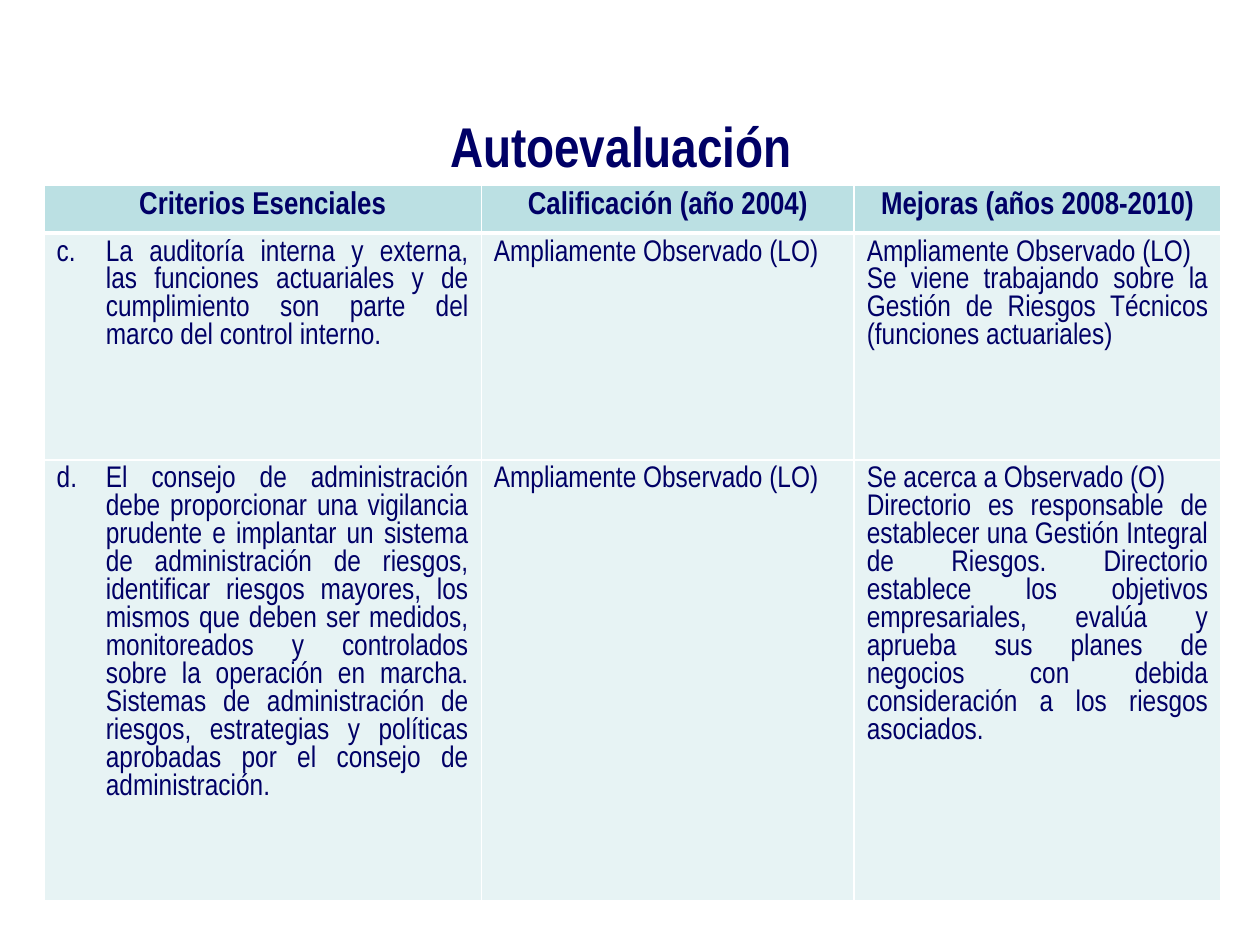
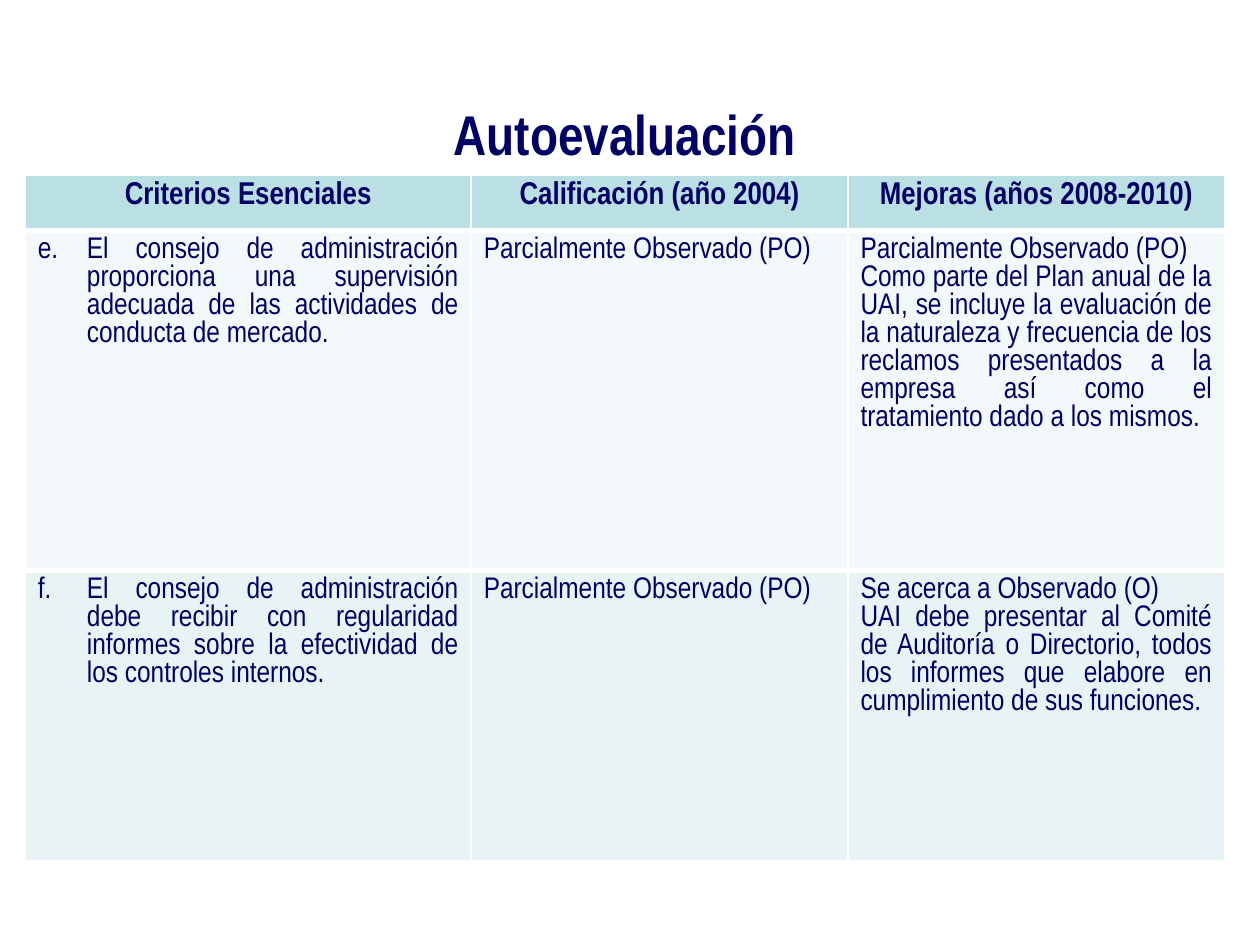
from lxml.etree import SubElement
from pptx import Presentation
from pptx.dml.color import RGBColor as Rgb
from pptx.enum.text import MSO_ANCHOR as Anchor, PP_ALIGN as Align
from pptx.oxml.ns import qn
from pptx.util import Inches, Pt

COLORS = {"ink": "000066", "header": "BBE0E3", "band": "E7F3F4",
          "pale": "F3F9FA", "border": "FFFFFF"}
FONT = "Arial Narrow"
TITLE = "Autoevaluación"
HEADERS = ["Criterios Esenciales", "Calificación (año 2004)", "Mejoras (años 2008-2010)"]
INDENT = Inches(0.39)
THIN, THICK = Pt(1), Pt(3)

# Places are percentages of the slide: x and widths of its width, y and heights of its height
SLIDES = [
    {
        "title": (6.7, 11.2, 85.2, 8.4),
        "corner": (3.5, 19.6),
        "columns": [34.7, 29.6, 29.1],
        "rows": [5.07, 24, 46.67],
        "fills": ["header", "band", "band"],
        "rules": [THIN, THICK, THIN, THIN],
        "first_letter": 3,
        "criteria": [
            (["La auditoría interna y externa, las funciones actuariales y de cumplimiento "
              "son parte del marco del control interno."],
             ["Ampliamente Observado (LO)"],
             ["Ampliamente Observado (LO)",
              "Se viene trabajando sobre la Gestión de Riesgos Técnicos (funciones actuariales)"]),
            (["El consejo de administración debe proporcionar una vigilancia prudente e "
              "implantar un sistema de administración de riesgos, identificar riesgos mayores, "
              "los mismos que deben ser medidos, monitoreados y controlados sobre la operación "
              "en marcha. Sistemas de administración de riesgos, estrategias y políticas "
              "aprobadas por el consejo de administración."],
             ["Ampliamente Observado (LO)"],
             ["Se acerca a Observado (O)",
              "Directorio es responsable de establecer una Gestión Integral de Riesgos. "
              "Directorio establece los objetivos empresariales, evalúa y aprueba sus planes "
              "de negocios con debida consideración a los riesgos asociados."]),
        ],
    },
    {
        "title": (7, 9.73, 85.2, 8.53),
        "corner": (2, 18.53),
        "columns": [35.4, 29.9, 29.9],
        "rows": [5.87, 36, 30.67],
        "fills": ["header", "pale", "band"],
        "rules": [THIN, THICK, THICK, THIN],
        "first_letter": 5,
        "criteria": [
            (["El consejo de administración proporciona una supervisión adecuada de las "
              "actividades de conducta de mercado."],
             ["Parcialmente Observado (PO)"],
             ["Parcialmente Observado (PO)",
              "Como parte del Plan anual de la UAI, se incluye la evaluación de la naturaleza "
              "y frecuencia de los reclamos presentados a la empresa así como el tratamiento "
              "dado a los mismos."]),
            (["El consejo de administración debe recibir con regularidad informes sobre la "
              "efectividad de los controles internos."],
             ["Parcialmente Observado (PO)"],
             ["Se acerca a Observado (O)",
              "UAI debe presentar al Comité de Auditoría o Directorio, todos los informes que "
              "elabore en cumplimiento de sus funciones."]),
        ],
    },
]


def write(para, text, size, align, bold=False):
    para.alignment = align
    span = para.add_run()
    span.text = text
    span.font.name = FONT
    span.font.size = Pt(size)
    span.font.bold = bold
    span.font.color.rgb = Rgb.from_string(COLORS["ink"])


def add_border(cell, side, width):
    line = SubElement(cell._tc.get_or_add_tcPr(), qn(f"a:ln{side}"), w=str(width))
    solid = SubElement(line, qn("a:solidFill"))
    SubElement(solid, qn("a:srgbClr"), val=COLORS["border"])


deck = Presentation()
deck.slide_width, deck.slide_height = Inches(10), Inches(7.5)
x_unit, y_unit = deck.slide_width / 100, deck.slide_height / 100

for content in SLIDES:
    page = deck.slides.add_slide(deck.slide_layouts[6])

    # Criteria table
    left, top = content["corner"]
    widths, heights = content["columns"], content["rows"]
    table = page.shapes.add_table(
        len(heights), len(widths), int(left * x_unit), int(top * y_unit),
        int(sum(widths) * x_unit), int(sum(heights) * y_unit)).table
    table.first_row = table.horz_banding = False
    for column, width in zip(table.columns, widths):
        column.width = int(width * x_unit)
    for row, height in zip(table.rows, heights):
        row.height = int(height * y_unit)

    rows = [[[header] for header in HEADERS], *content["criteria"]]
    for r, texts in enumerate(rows):
        for c, paragraphs in enumerate(texts):
            cell = table.cell(r, c)
            above, below = content["rules"][r:r + 2]
            for side, width in zip("LRTB", (THIN, THIN, above, below)):
                add_border(cell, side, width)
            cell.fill.solid()
            cell.fill.fore_color.rgb = Rgb.from_string(COLORS[content["fills"][r]])

            for i, text in enumerate(paragraphs):
                para = cell.text_frame.paragraphs[0] if i == 0 else cell.text_frame.add_paragraph()
                if r == 0:
                    write(para, text, 18, Align.CENTER, bold=True)
                    continue
                # Lettered criteria in the first column
                if c == 0:
                    props = para._p.get_or_add_pPr()
                    props.set("marL", str(INDENT))
                    props.set("indent", str(-INDENT))
                    SubElement(props, qn("a:buFont"), typeface="+mj-lt")
                    SubElement(props, qn("a:buAutoNum"), type="alphaLcPeriod",
                               startAt=str(content["first_letter"] + r - 1))
                write(para, text, 17, Align.JUSTIFY)

    # Title
    x, y, width, height = content["title"]
    box = page.shapes.add_textbox(int(x * x_unit), int(y * y_unit),
                                  int(width * x_unit), int(height * y_unit))
    box.text_frame.word_wrap = True
    box.text_frame.vertical_anchor = Anchor.BOTTOM
    write(box.text_frame.paragraphs[0], TITLE, 32, Align.CENTER, bold=True)

deck.save("out.pptx")
